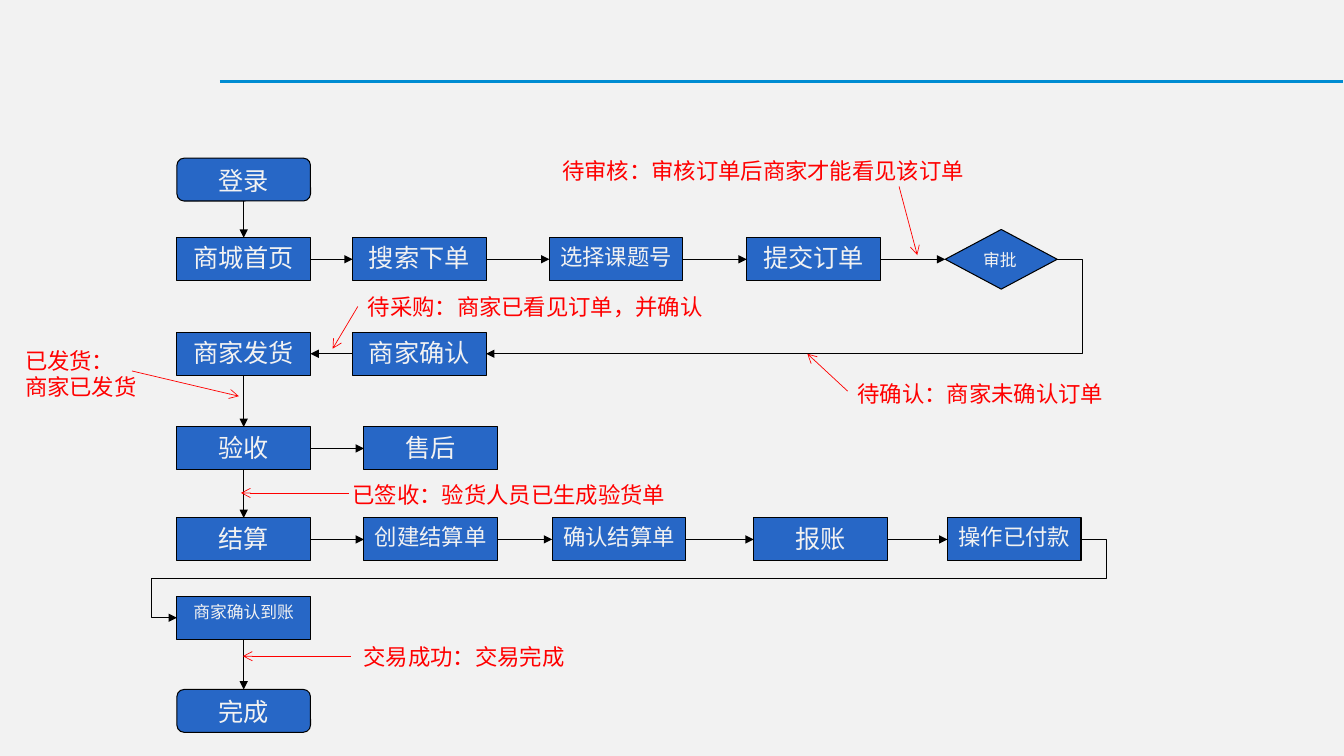
from lxml.etree import SubElement
from pptx import Presentation
from pptx.dml.color import RGBColor
from pptx.enum.shapes import MSO_CONNECTOR, MSO_SHAPE
from pptx.enum.text import MSO_ANCHOR, PP_ALIGN
from pptx.oxml.ns import qn
from pptx.util import Pt

BLUE, BLACK, RED, PALE = "2767C6", "000000", "FF0000", "F2F2F2"
BOX_W, BOX_H = 95.4, 30.6
STUB = 18
TOP, LEFT, BOTTOM, RIGHT = range(4)

STEPS = {
    "登录": (0, 0, 18),
    "商城首页": (0, 56.9, 18),
    "搜索下单": (125.5, 56.9, 18),
    "选择课题号": (266, 56.9, 16),
    "提交订单": (407, 56.9, 18),
    "审批": (548.8, 50.9, 12),
    "商家发货": (0, 124.4, 18),
    "商家确认": (125.5, 124.4, 18),
    "验收": (0, 192, 18),
    "售后": (133.6, 192, 18),
    "结算": (0, 257, 18),
    "创建结算单": (133.6, 257, 16),
    "确认结算单": (268, 257, 16),
    "报账": (412, 257, 18),
    "操作已付款": (550.4, 257, 16),
    "商家确认到账": (0, 313, 12),
    "完成": (0, 379.5, 18),
}
ACROSS = [
    ["商城首页", "搜索下单", "选择课题号", "提交订单", "审批"],
    ["验收", "售后"],
    ["结算", "创建结算单", "确认结算单", "报账", "操作已付款"],
]
DOWN = [["登录", "商城首页"], ["商家发货", "验收", "结算"], ["商家确认到账", "完成"]]
NOTES = [
    (["待审核：审核订单后商家才能看见该订单"], (394.5, 108.7, 415), (642.2, 133.2, 655.2, 182.2)),
    (["待确认：商家未确认订单"], (605.5, 268, 220), (605.5, 279.4, 576.7, 252.7)),
    (["待采购：商家已看见订单，并确认"], (255.6, 206, 295), (255.6, 218.9, 237.6, 249.1)),
    (["已发货：", "商家已发货"], (10.8, 244.1, 120), (94.3, 265, 170.6, 283)),
    (["已签收：验货人员已生成验货单"], (244.8, 340, 264), (249.1, 352.1, 172.1, 352.1)),
    (["交易成功：交易完成"], (252.7, 456, 241), (250.6, 468.7, 173.5, 468.7)),
]


def rgb(value):
    return RGBColor.from_string(value)


def write(tf, lines, align, size, name, color):
    tf.word_wrap = True
    tf.vertical_anchor = MSO_ANCHOR.TOP
    for i, line in enumerate(lines):
        p = tf.add_paragraph() if i else tf.paragraphs[0]
        p.alignment = align
        r = p.add_run()
        r.text = line
        for key, value in {"size": Pt(size), "name": name}.items():
            setattr(r.font, key, value)
        r.font.color.rgb = rgb(color)


def add_line(s, ends, color, width, head=None, kind=MSO_CONNECTOR.STRAIGHT):
    c = s.shapes.add_connector(kind, *map(Pt, ends))
    c.line.color.rgb = rgb(color)
    c.line.width = Pt(width)
    if head:
        SubElement(c.line._get_or_add_ln(), qn("a:tailEnd"), type=head)
    SubElement(c._element.spPr, qn("a:effectLst"))
    return c


def add_step(s, text, x, y, size):
    w, h, kind, align = BOX_W, BOX_H, MSO_SHAPE.RECTANGLE, PP_ALIGN.CENTER
    if text in ("登录", "完成"):
        kind = MSO_SHAPE.ROUNDED_RECTANGLE
    elif text == "审批":
        w, h, kind, align = 80, 42.6, MSO_SHAPE.FLOWCHART_DECISION, PP_ALIGN.LEFT
    sp = s.shapes.add_shape(kind, Pt(x), Pt(y), Pt(w), Pt(h))
    sp.shadow.inherit = False
    sp.fill.solid()
    sp.fill.fore_color.rgb = rgb(BLUE)
    sp.line.color.rgb = rgb(BLACK)
    sp.line.width = Pt(0.75)
    write(sp.text_frame, [text], align, size, "Arial", PALE)
    return sp


def link(s, start, start_site, end, end_site, kind=MSO_CONNECTOR.STRAIGHT):
    c = add_line(s, (0, 0, 0, 0), BLACK, 0.75, "triangle", kind)
    c.begin_connect(start, start_site)
    c.end_connect(end, end_site)
    return c


def bend(c, shape, ratios):
    geom = c._element.spPr.find(qn("a:prstGeom"))
    geom.set("prst", shape)
    guides = geom.find(qn("a:avLst"))
    if guides is None:
        guides = SubElement(geom, qn("a:avLst"))
    for i, ratio in enumerate(ratios, 1):
        SubElement(guides, qn("a:gd"), name=f"adj{i}", fmla=f"val {round(ratio * 100000)}")


def draw_flow(s, left, top):
    steps = {t: add_step(s, t, left + x, top + y, size) for t, (x, y, size) in STEPS.items()}
    for chains, out, into in ((ACROSS, RIGHT, LEFT), (DOWN, BOTTOM, TOP)):
        for chain in chains:
            for a, b in zip(chain, chain[1:]):
                link(s, steps[a], out, steps[b], into)
    link(s, steps["商家确认"], LEFT, steps["商家发货"], RIGHT)
    c = link(s, steps["审批"], RIGHT, steps["商家确认"], RIGHT, MSO_CONNECTOR.ELBOW)
    bend(c, "bentConnector3", [-Pt(STUB) / c.width])
    c = link(s, steps["操作已付款"], RIGHT, steps["商家确认到账"], LEFT, MSO_CONNECTOR.ELBOW)
    out = Pt(STUB) / c.width
    bend(c, "bentConnector5", [-out, 0.5, 1 + out])


def draw_note(s, lines, box, pointer):
    x, y, w = box
    tb = s.shapes.add_textbox(Pt(x), Pt(y), Pt(w), Pt(7.2 + 19.4 * len(lines)))
    write(tb.text_frame, lines, PP_ALIGN.JUSTIFY, 16, "Calibri", RED)
    add_line(s, pointer, RED, 0.5, "arrow")


def main():
    prs = Presentation()
    prs.slide_width, prs.slide_height = Pt(960), Pt(540)
    s = prs.slides.add_slide(prs.slide_layouts[6])
    s.background.fill.solid()
    s.background.fill.fore_color.rgb = rgb(PALE)
    add_line(s, (157, 58, 959, 58), "008CD2", 2.25)
    draw_flow(s, 126.4, 113)
    for note in NOTES:
        draw_note(s, *note)
    prs.save("out.pptx")


if __name__ == "__main__":
    main()
